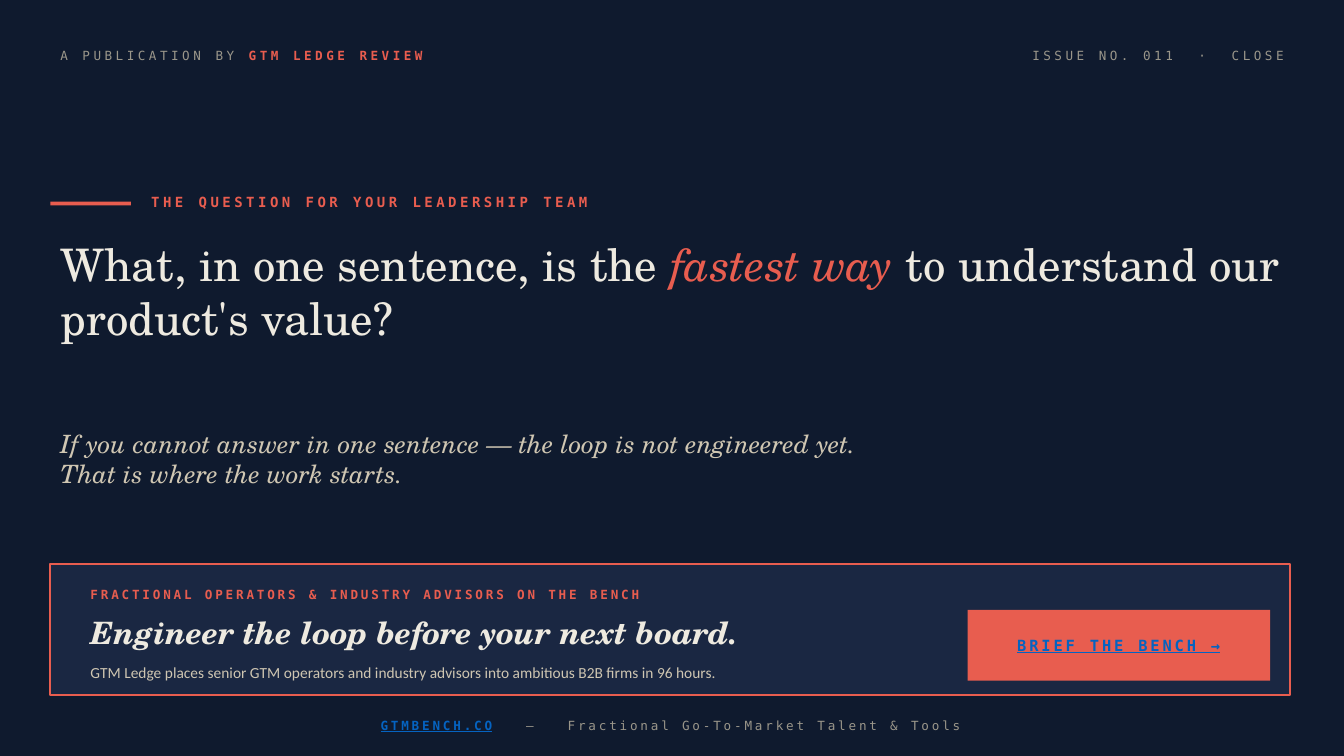
from pptx import Presentation
from pptx.dml.color import RGBColor
from pptx.enum.shapes import MSO_SHAPE as Shape
from pptx.enum.text import MSO_ANCHOR as Anchor, MSO_AUTO_SIZE as AutoSize, PP_ALIGN as Align
from pptx.util import Cm, Pt

COLORS = {
    "night": "0F1A2E",
    "panel": "1A2742",
    "coral": "E85D4F",
    "cream": "EEEAE0",
    "sand": "CFC6B2",
    "gray": "9A968A",
    "link": "0563C1",
}
MONO, SERIF, SANS = "DejaVu Sans Mono", "TeX Gyre Schola", "Calibri"
MARGIN, CONTENT_WIDTH = 1.27, 31.24


def rgb(name):
    return RGBColor.from_string(COLORS[name])


def write(shape, *lines, align=Align.LEFT, anchor=Anchor.MIDDLE, **base):
    """Fill a shape with lines; each is a list of (text, overrides) runs."""
    frame = shape.text_frame
    frame.word_wrap = True
    frame.auto_size = AutoSize.NONE
    frame.vertical_anchor = anchor
    for number, line in enumerate(lines):
        paragraph = frame.add_paragraph() if number else frame.paragraphs[0]
        paragraph.alignment = align
        for words, overrides in line:
            style = {**base, **overrides}
            run = paragraph.add_run()
            run.text = words
            run.font.name = style["font"]
            run.font.size = Pt(style["size"])
            run.font.color.rgb = rgb(style["color"])
            run.font.bold = style.get("bold", False)
            run.font.italic = style.get("italic", False)
            run.font.underline = style.get("underline", False)
            if "tracking" in style:
                run._r.get_or_add_rPr().set("spc", str(round(style["tracking"] * 100)))


def add_label(slide, box, *lines, **style):
    label = slide.shapes.add_textbox(*map(Cm, box))
    write(label, *lines, **style)


def add_block(slide, box, fill, border=None):
    block = slide.shapes.add_shape(Shape.RECTANGLE, *map(Cm, box))
    block.shadow.inherit = False
    block.fill.solid()
    block.fill.fore_color.rgb = rgb(fill)
    if border:
        block.line.color.rgb = rgb(border)
        block.line.width = Pt(1.5)
    else:
        block.line.fill.background()
    return block


def add_masthead(slide, left, top, width, height):
    style = dict(font=MONO, size=9, color="gray", tracking=2.5)
    wide_space = (" ", dict(tracking=10.4))
    add_label(slide, (left, top, 17.78, height),
              [("A PUBLICATION BY ", {}),
               ("GTM LEDGE REVIEW", dict(color="coral", bold=True))], **style)
    add_label(slide, (left + width - 19.81, top, 19.89, height),
              [("ISSUE NO. 011", {}), wide_space, ("·", {}), wide_space, ("CLOSE", {})],
              align=Align.RIGHT, **style)


def add_question(slide, left, top, width):
    add_block(slide, (left, top + 0.38, 2.03, 0.1), "coral")
    add_label(slide, (left + 2.29, top, 27.94, 0.76),
              [("THE QUESTION FOR YOUR LEADERSHIP TEAM", {})],
              font=MONO, size=10, color="coral", bold=True, tracking=2.5)

    question = slide.shapes.title
    question.left, question.top = Cm(left), Cm(top + 1.14)
    question.width, question.height = Cm(width), Cm(4.57)
    write(question,
          [("What, in one sentence, is the ", {}),
           ("fastest way ", dict(color="coral", italic=True)),
           ("to understand our product's value?", {})],
          anchor=Anchor.TOP, font=SERIF, size=32, color="cream")

    add_label(slide, (left, top + 5.97, width, 3.05),
              [("If you cannot answer in one sentence — the loop is not engineered yet.", {})],
              [("That is where the work starts.", {})],
              anchor=Anchor.TOP, font=SERIF, size=18, color="sand", italic=True)


def add_offer(slide, left, top, width, height):
    add_block(slide, (left, top, width, height), "panel", border="coral")
    inset = left + 0.76
    add_label(slide, (inset, top + 0.38, 29.72, 0.76),
              [("FRACTIONAL OPERATORS & INDUSTRY ADVISORS ON THE BENCH", {})],
              font=MONO, size=9, color="coral", bold=True, tracking=2)
    add_label(slide, (inset, top + 1.14, 21.59, 1.14),
              [("Engineer the loop before your next board.", {})],
              font=SERIF, size=22, color="cream", bold=True, italic=True)
    add_label(slide, (inset, top + 2.29, 21.59, 0.89),
              [("GTM Ledge places senior GTM operators and industry advisors "
                "into ambitious B2B firms in 96 hours.", {})],
              font=SANS, size=11, color="sand")
    button = add_block(slide, (left + width - 8.13, top + 1.15, 7.62, 1.78), "coral")
    write(button, [("BRIEF THE BENCH →", {})], align=Align.CENTER,
          font=MONO, size=11, color="link", bold=True, underline=True, tracking=2)


def add_footer(slide, left, top, width, height):
    wide_space = (" ", dict(tracking=16.8))
    add_label(slide, (left, top, width, height),
              [("GTMBENCH.CO", dict(color="link", bold=True, underline=True)),
               wide_space, ("—", {}), wide_space,
               ("Fractional Go-To-Market Talent & Tools", {})],
              align=Align.CENTER, font=MONO, size=9, color="gray", tracking=2)


def main():
    deck = Presentation()
    deck.slide_width, deck.slide_height = Cm(33.86), Cm(19.05)
    slide = deck.slides.add_slide(deck.slide_layouts.get_by_name("Title Only"))
    slide.background.fill.solid()
    slide.background.fill.fore_color.rgb = rgb("night")

    add_masthead(slide, MARGIN, 1.02, CONTENT_WIDTH, 0.76)
    add_question(slide, MARGIN, 4.7, CONTENT_WIDTH)
    add_offer(slide, MARGIN, 14.22, CONTENT_WIDTH, 3.3)
    add_footer(slide, MARGIN, 17.91, CONTENT_WIDTH, 0.76)
    deck.save("out.pptx")


if __name__ == "__main__":
    main()
